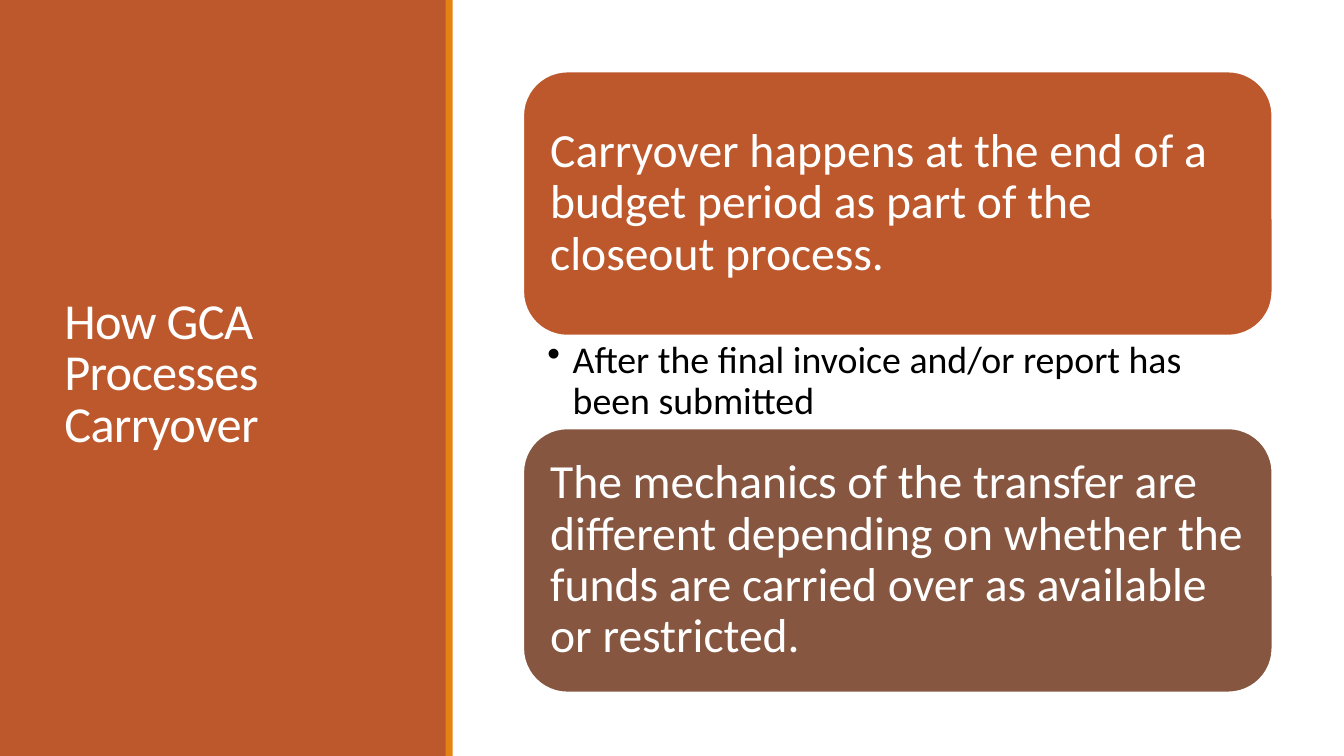
import pptx
import pptx.dml.color
import pptx.enum.shapes
import pptx.enum.text
import pptx.oxml.ns
import pptx.util
from lxml import etree

RUST = pptx.dml.color.RGBColor(0xBD, 0x58, 0x2C)
ORANGE = pptx.dml.color.RGBColor(0xE4, 0x83, 0x12)
BROWN = pptx.dml.color.RGBColor(0x86, 0x56, 0x40)
WHITE = pptx.dml.color.RGBColor(0xFF, 0xFF, 0xFF)
BLACK = pptx.dml.color.RGBColor(0x00, 0x00, 0x00)

SHAPES = pptx.enum.shapes.MSO_SHAPE
MIDDLE = pptx.enum.text.MSO_ANCHOR.MIDDLE
TOP = pptx.enum.text.MSO_ANCHOR.TOP
LEFT = pptx.enum.text.PP_ALIGN.LEFT

CARD_LEFT, CARD_WIDTH = 38.93, 55.74
CARD_TOP, CARD_HEIGHT, DETAIL_HEIGHT = 9.47, 34.93, 12.27
CARDS = [
    (RUST, "Carryover happens at the end of a budget period as part of the closeout process.",
     "After the final invoice and/or report has been submitted"),
    (BROWN, "The mechanics of the transfer are different depending on whether the funds "
     "are carried over as available or restricted.", None),
]


def apply_format(target, values):
    for name, value in values.items():
        setattr(target, name, value)


class SlideBuilder:
    font_name = "Calibri"

    def __init__(self, presentation):
        self.width = presentation.slide_width
        self.height = presentation.slide_height
        self.slide = presentation.slides.add_slide(presentation.slide_layouts[6])

    def place(self, left, top, width, height):
        return [round(share * side / 100) for share, side in
                zip((left, top, width, height), (self.width, self.height) * 2)]

    def fill_text(self, shape, text, size, color, line_spacing, anchor, insets):
        frame = shape.text_frame
        margins = ("margin_left", "margin_top", "margin_right", "margin_bottom")
        apply_format(frame, {"word_wrap": True, "vertical_anchor": anchor})
        apply_format(frame, {name: pptx.util.Inches(inset) for name, inset in zip(margins, insets)})
        paragraph = frame.paragraphs[0]
        apply_format(paragraph, {"alignment": LEFT, "line_spacing": line_spacing})
        run = paragraph.add_run()
        run.text = text
        apply_format(run.font, {"name": self.font_name, "size": pptx.util.Pt(size)})
        run.font.color.rgb = color
        return paragraph

    def block(self, area, fill, kind=SHAPES.RECTANGLE):
        shape = self.slide.shapes.add_shape(kind, *self.place(*area))
        shape.shadow.inherit = False
        shape.fill.solid()
        shape.fill.fore_color.rgb = fill
        shape.line.fill.background()
        return shape

    def card(self, area, fill, text):
        shape = self.block(area, fill, SHAPES.ROUNDED_RECTANGLE)
        shape.line.color.rgb = WHITE
        shape.line.width = pptx.util.Pt(1.25)
        self.fill_text(shape, text, 34, WHITE, 0.9, MIDDLE, [0.14] * 4)

    def title(self, area, text):
        shape = self.slide.shapes.add_textbox(*self.place(*area))
        paragraph = self.fill_text(shape, text, 36, WHITE, 0.85, MIDDLE, (0.1, 0.05, 0.1, 0.05))
        paragraph.runs[0]._r.get_or_add_rPr().set("spc", "-50")

    def bullet(self, area, text):
        shape = self.slide.shapes.add_textbox(*self.place(*area))
        paragraph = self.fill_text(shape, text, 27, BLACK, 0.9, TOP, (0.24, 0.05, 0.26, 0.05))
        properties = paragraph._p.get_or_add_pPr()
        indent = pptx.util.Inches(0.25)
        properties.set("marL", str(indent))
        properties.set("indent", str(-indent))
        etree.SubElement(properties, pptx.oxml.ns.qn("a:buChar")).set("char", "•")


def main():
    presentation = pptx.Presentation()
    apply_format(presentation, {"slide_width": pptx.util.Inches(13.33),
                                "slide_height": pptx.util.Inches(7.5)})
    builder = SlideBuilder(presentation)
    builder.block((0, 0, 33.23, 100), RUST)
    builder.title((4.05, 7.6, 25.28, 84.13), "How GCA Processes Carryover")
    builder.block((33.16, 0, 0.53, 100), ORANGE)
    for index, (fill, text, detail) in enumerate(CARDS):
        top = CARD_TOP + index * (CARD_HEIGHT + DETAIL_HEIGHT)
        builder.card((CARD_LEFT, top, CARD_WIDTH, CARD_HEIGHT), fill, text)
        if detail:
            builder.bullet((CARD_LEFT, top + CARD_HEIGHT, CARD_WIDTH, DETAIL_HEIGHT), detail)
    presentation.save("out.pptx")


if __name__ == "__main__":
    main()
